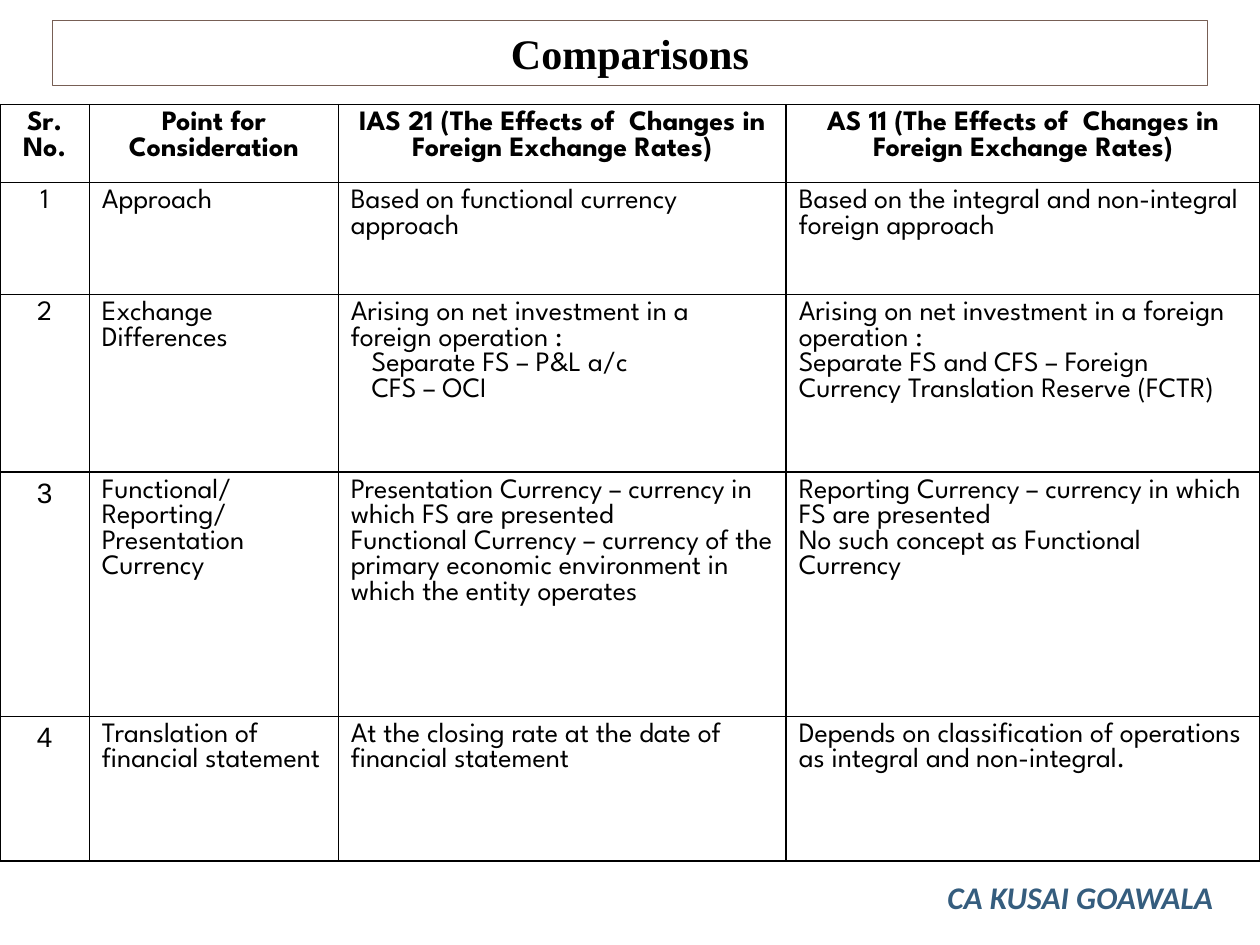
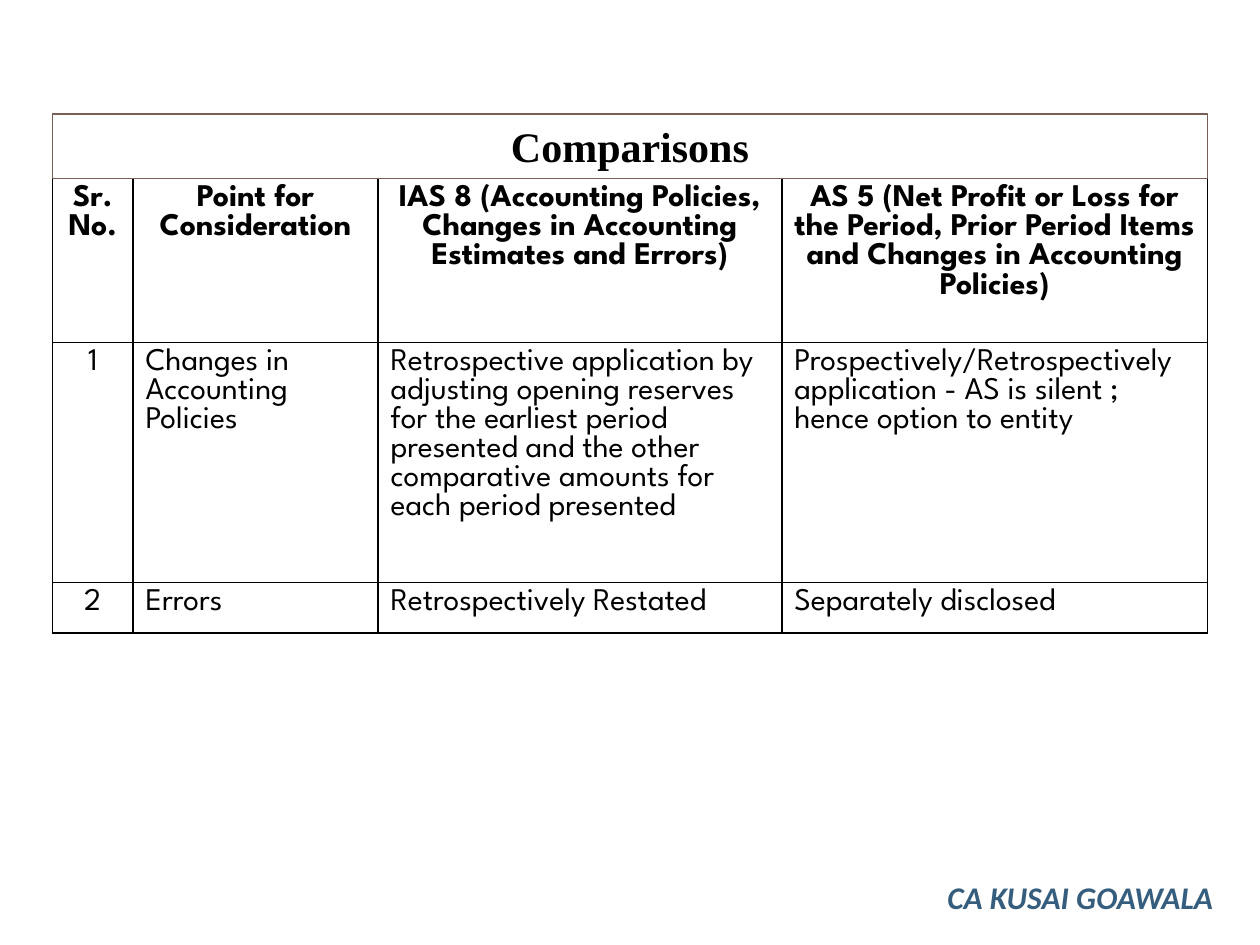
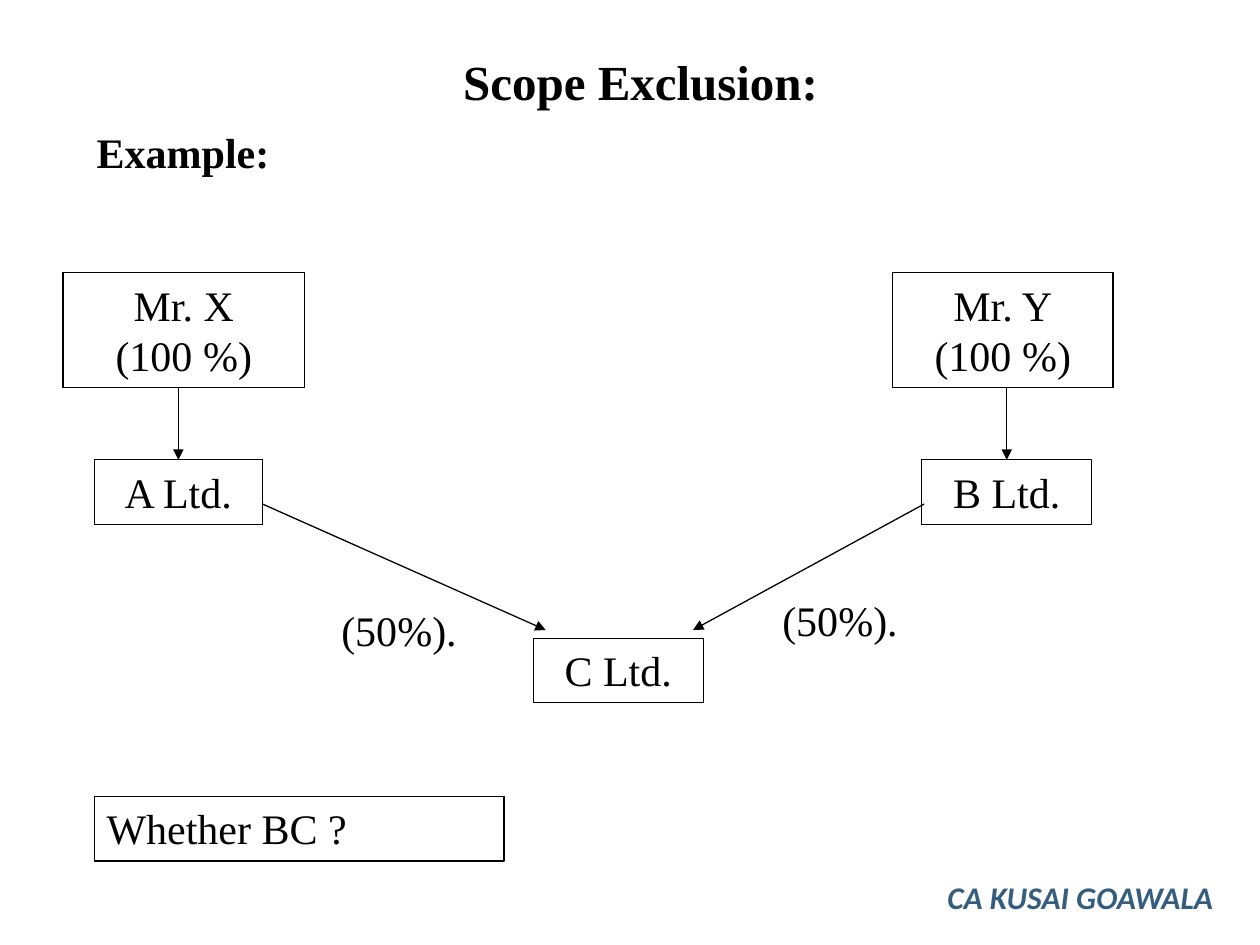
from dataclasses import dataclass

from lxml.etree import SubElement
from pptx import Presentation
from pptx.dml.color import RGBColor
from pptx.enum.shapes import MSO_CONNECTOR as Connector, MSO_SHAPE as Shape
from pptx.enum.text import MSO_ANCHOR as Anchor, PP_ALIGN as Align
from pptx.oxml.ns import qn
from pptx.util import Cm, Pt

COLOURS = {"text": "000000", "rule": "000000", "band": "775F55", "footer": "355D7E"}
SERIF = "Times New Roman"
TABLE_FONT = "League Spartan"
TOP, BOTTOM = 0, 2


@dataclass(frozen=True)
class Style:
    size: float = 24
    font: str = SERIF
    bold: bool = False
    italic: bool = False
    colour: str = "text"


@dataclass(frozen=True)
class Para:
    text: str
    style: Style = Style()
    align: Align = Align.CENTER
    before: float = 0
    indent: float = 0


@dataclass(frozen=True)
class Area:
    left: float
    top: float
    width: float
    height: float

    @property
    def centre(self) -> float:
        return self.left + self.width / 2

    def lengths(self) -> tuple:
        return Cm(self.left), Cm(self.top), Cm(self.width), Cm(self.height)


@dataclass(frozen=True)
class Holding:
    """An owner and the company held, with the arrow on to the joint company."""
    owner: str
    owner_area: Area
    company: str
    company_area: Area
    arrow_start: tuple
    arrow_end: tuple
    share_area: Area


@dataclass(frozen=True)
class Comparison:
    band_top: float
    left: float
    top: float
    widths: tuple
    heights: tuple
    size: float
    headings: tuple
    rows: tuple
    arial_rows: tuple = ()


def colour_of(name: str) -> RGBColor:
    return RGBColor.from_string(COLOURS[name])


def write(frame, paras: list[Para]) -> None:
    frame.word_wrap = True
    for index, para in enumerate(paras):
        line = frame.paragraphs[0] if index == 0 else frame.add_paragraph()
        line.alignment = para.align
        line.space_before = Pt(para.before)
        if para.indent:
            line._p.get_or_add_pPr().set("marL", str(Cm(para.indent)))
        span = line.add_run()
        span.text = para.text
        style = para.style
        span.font.name, span.font.size = style.font, Pt(style.size)
        span.font.bold, span.font.italic = style.bold, style.italic
        span.font.color.rgb = colour_of(style.colour)


def add_text(page, area: Area, paras: list[Para]):
    box = page.shapes.add_textbox(*area.lengths())
    write(box.text_frame, paras)
    return box


def add_box(page, area: Area, paras: list[Para], line: str = "rule"):
    box = page.shapes.add_shape(Shape.RECTANGLE, *area.lengths())
    box.shadow.inherit = False
    box.fill.background()
    box.line.color.rgb = colour_of(line)
    box.line.width = Pt(0.75)
    box.text_frame.vertical_anchor = Anchor.TOP
    write(box.text_frame, paras)
    return box


def add_arrow(page, start: tuple, end: tuple):
    points = [Cm(value) for value in (*start, *end)]
    arrow = page.shapes.add_connector(Connector.STRAIGHT, *points)
    arrow.line.color.rgb = colour_of("rule")
    arrow.line.width = Pt(0.75)
    SubElement(arrow.line._get_or_add_ln(), qn("a:tailEnd"), type="triangle")
    SubElement(arrow._element.spPr, qn("a:effectLst"))
    return arrow


def add_footer(page) -> None:
    style = Style(18, "Calibri", bold=True, italic=True, colour="footer")
    add_text(page, Area(18.85, 17.58, 6.55, 1.02),
             [Para("CA KUSAI GOAWALA", style, Align.LEFT)])


def rule_cell(cell) -> None:
    """Clear the fill and draw a thin line on all four sides."""
    properties = cell._tc.get_or_add_tcPr()
    for side in ("lnL", "lnR", "lnT", "lnB"):
        line = SubElement(properties, qn(f"a:{side}"), w=str(Pt(1)))
        fill = SubElement(line, qn("a:solidFill"))
        SubElement(fill, qn("a:srgbClr"), val=COLOURS["rule"])
    cell.fill.background()


def cell_paras(content, row: int, column: int, comparison: Comparison) -> list[Para]:
    arial = column == 0 and row in comparison.arial_rows
    style = Style(comparison.size, "Arial" if arial else TABLE_FONT, bold=row == 0)
    align = Align.CENTER if row == 0 or column == 0 else Align.LEFT
    lines = (content,) if isinstance(content, str) else content
    return [line if isinstance(line, Para) else Para(line, style, align) for line in lines]


def add_comparison(deck, comparison: Comparison) -> None:
    page = deck.slides.add_slide(deck.slide_layouts[6])
    area = Area(comparison.left, comparison.top,
                sum(comparison.widths), sum(comparison.heights))
    rows = (comparison.headings, *comparison.rows)
    table = page.shapes.add_table(len(rows), len(comparison.widths), *area.lengths()).table
    table.first_row = table.horz_banding = False
    for column, width in zip(table.columns, comparison.widths):
        column.width = Cm(width)
    for row, height in zip(table.rows, comparison.heights):
        row.height = Cm(height)
    for row, contents in enumerate(rows):
        for column, content in enumerate(contents):
            cell = table.cell(row, column)
            rule_cell(cell)
            write(cell.text_frame, cell_paras(content, row, column, comparison))
    add_box(page, Area(1.06, comparison.band_top, 23.28, 1.3),
            [Para("Comparisons", Style(bold=True))], "band")
    add_footer(page)


def add_scope_example(deck) -> None:
    page = deck.slides.add_slide(deck.slide_layouts[6])
    heading = add_text(page, Area(1.7, 0.84, 22.43, 3.81), [
        Para("Scope Exclusion:", Style(28, bold=True)),
        Para("Example:", Style(bold=True), Align.LEFT, before=9),
    ])
    heading.text_frame.margin_top = Cm(0.2)
    for holding in HOLDINGS:
        owner, company = holding.owner_area, holding.company_area
        add_box(page, owner, [Para(holding.owner), Para("(100 %)")])
        company_box = add_box(page, company, [Para(holding.company)])
        down = add_arrow(page, (company.centre, owner.top + owner.height),
                         (company.centre, company.top))
        down.end_connect(company_box, TOP)
        add_arrow(page, holding.arrow_start, holding.arrow_end)
        add_text(page, holding.share_area, [Para("(50%).")])
    add_box(page, Area(10.75, 12.87, 3.43, 1.3), [Para("C Ltd.")])
    add_box(page, Area(1.9, 16.06, 8.26, 1.3), [Para("Whether BC ?", align=Align.LEFT)])
    add_footer(page)


HOLDINGS = (
    Holding("Mr. X", Area(1.27, 5.5, 4.87, 2.31), "A Ltd.", Area(1.9, 9.27, 3.39, 1.3),
            (5.29, 10.16), (11, 12.7), Area(6.35, 12.06, 3.39, 1.28)),
    Holding("Mr. Y", Area(17.99, 5.5, 4.45, 2.31), "B Ltd.", Area(18.58, 9.27, 3.43, 1.3),
            (18.63, 10.16), (13.97, 12.7), Area(15.24, 11.85, 3.39, 1.28)),
)

SUB_ITEM = Style(16, TABLE_FONT)

EXCHANGE_RATES = Comparison(
    band_top=0.42, left=0, top=2.11, size=16,
    widths=(1.8, 5.02, 9.03, 9.55), heights=(1.57, 2.26, 3.58, 4.92, 2.92),
    headings=("Sr. No.", "Point for Consideration",
              "IAS 21 (The Effects of  Changes in Foreign Exchange Rates)",
              "AS 11 (The Effects of  Changes in Foreign Exchange Rates)"),
    rows=(
        ("1", "Approach", "Based on functional currency approach",
         "Based on the integral and non-integral foreign approach"),
        ("2", "Exchange Differences",
         ("Arising on net investment in a foreign operation :",
          Para("Separate FS – P&L a/c", SUB_ITEM, Align.LEFT, indent=0.42),
          Para("CFS – OCI", SUB_ITEM, Align.LEFT, indent=0.42)),
         ("Arising on net investment in a foreign operation :",
          "Separate FS and CFS – Foreign Currency Translation Reserve (FCTR)")),
        ("3", "Functional/Reporting/Presentation Currency",
         ("Presentation Currency – currency in which FS are presented",
          "Functional Currency – currency of the primary economic environment "
          "in which the entity operates"),
         ("Reporting Currency – currency in which FS are presented",
          "No such concept as Functional Currency")),
        ("4", "Translation of financial statement",
         "At the closing rate at the date of financial statement",
         "Depends on classification of operations as integral and non-integral."),
    ),
    arial_rows=(3, 4),
)

ACCOUNTING_POLICIES = Comparison(
    band_top=2.3, left=1.06, top=3.6, size=18,
    widths=(1.62, 4.94, 8.14, 8.58), heights=(3.3, 4.84, 1),
    headings=("Sr. No.", "Point for Consideration",
              "IAS 8 (Accounting Policies, Changes in Accounting Estimates and Errors)",
              "AS 5 (Net Profit or Loss for the Period, Prior Period Items "
              "and Changes in Accounting Policies)"),
    rows=(
        ("1", "Changes in Accounting Policies",
         "Retrospective application by adjusting opening reserves for the earliest period "
         "presented and the other comparative amounts for each period presented",
         "Prospectively/Retrospectively application - AS is silent ; hence option to entity"),
        ("2", "Errors", "Retrospectively Restated", "Separately disclosed"),
    ),
)


def main() -> None:
    deck = Presentation()
    deck.slide_width, deck.slide_height = Cm(25.4), Cm(19.05)
    add_comparison(deck, EXCHANGE_RATES)
    add_comparison(deck, ACCOUNTING_POLICIES)
    add_scope_example(deck)
    deck.save("out.pptx")


if __name__ == "__main__":
    main()
